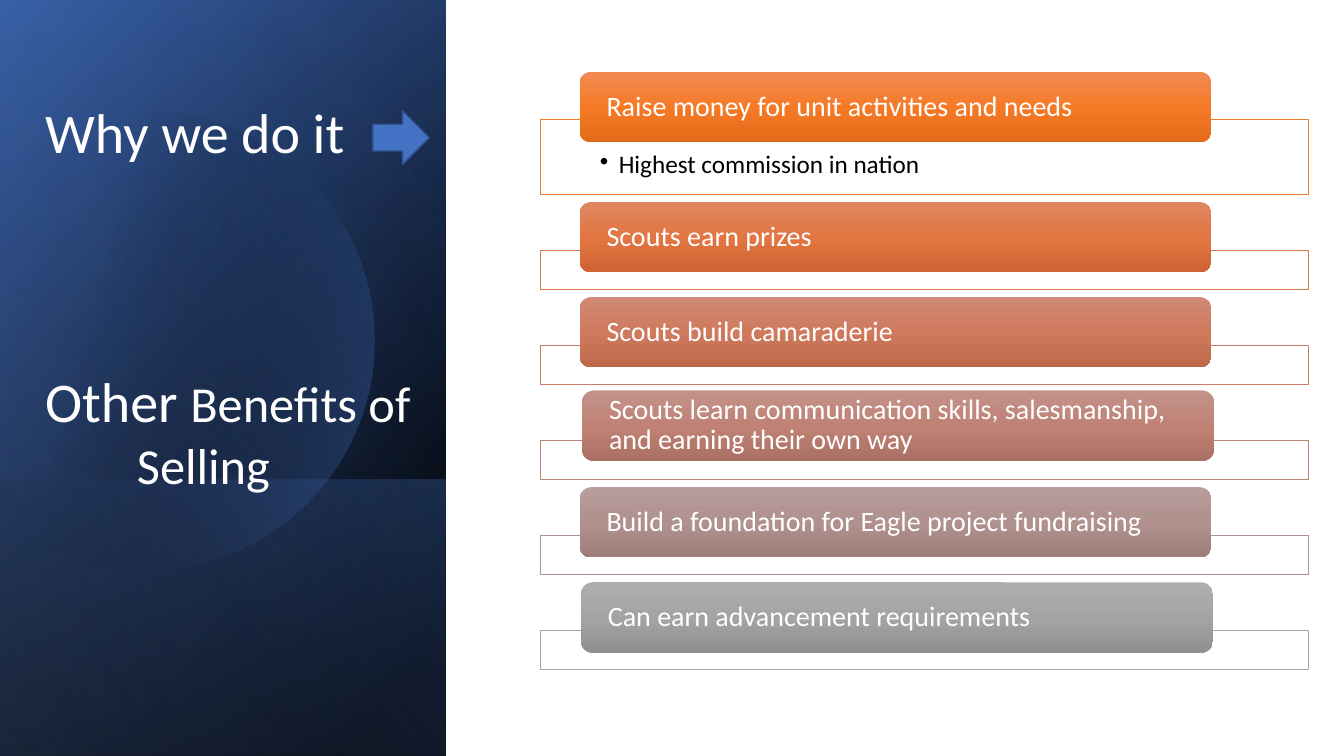
from math import acos, cos, sin

from lxml.etree import SubElement
from pptx import Presentation
from pptx.dml.color import RGBColor
from pptx.enum.shapes import MSO_SHAPE
from pptx.enum.text import MSO_ANCHOR, PP_ALIGN
from pptx.oxml.ns import qn
from pptx.util import Pt

FONT = "Calibri"
WHITE = "FFFFFF"
BLUE = "4472C4"

# Text, gradient, frame line, bullet, nudge of the bar (x, y)
ITEMS = [
    ("Raise money for unit activities and needs",
     ("F08B54", "F67A26", "E36A18"), "ED7D31",
     "Highest commission in nation", (0, 0)),
    ("Scouts earn prizes",
     ("DF8763", "E27542", "CF6432"), "DB784A", None, (0, 0)),
    ("Scouts build camaraderie",
     ("D08A76", "CF795D", "BD674B"), "CB7C63", None, (0, 0)),
    ("Scouts learn communication skills, salesmanship, and earning their own way",
     ("C39289", "BF8275", "AB7064"), "BC857A", None, (1.8, -1.2)),
    ("Build a foundation for Eagle project fundraising",
     ("B79E9B", "B0918E", "9D7E7B"), "AF9390", None, (0, 0)),
    ("Can earn advancement requirements",
     ("AEAEAE", "A4A4A4", "909090"), "A4A4A4", None, (1, 0)),
]


def color(code):
    return RGBColor.from_string(code)


def blend(shape, stops, angle):
    """Fill with a gradient of (position, colour, opacity) stops."""
    shape.fill.gradient()
    grad = shape._element.spPr.find(qn("a:gradFill"))
    group = grad.find(qn("a:gsLst"))
    for old in list(group):
        group.remove(old)
    for pos, code, alpha in stops:
        stop = SubElement(group, qn("a:gs"), pos=str(pos * 1000))
        tint = SubElement(stop, qn("a:srgbClr"), val=code)
        if alpha < 100:
            SubElement(tint, qn("a:alpha"), val=str(alpha * 1000))
    grad.find(qn("a:lin")).set("ang", str(angle * 60000))


def add_part(slide, kind, left, top, width, height, line=None, weight=0.75):
    shape = slide.shapes.add_shape(
        kind, Pt(left), Pt(top), Pt(width), Pt(height))
    shape.shadow.inherit = False
    if line:
        shape.line.color.rgb = color(line)
        shape.line.width = Pt(weight)
    else:
        shape.line.fill.background()
    return shape


def set_frame(shape, insets, anchor):
    frame = shape.text_frame
    frame.word_wrap = True
    frame.vertical_anchor = anchor
    left, top, right, bottom = map(Pt, insets)
    frame.margin_left, frame.margin_top = left, top
    frame.margin_right, frame.margin_bottom = right, bottom
    return frame


def add_run(para, text, size, code):
    run = para.add_run()
    run.text = text
    run.font.name = FONT
    run.font.size = Pt(size)
    run.font.color.rgb = color(code)


def style(para, indent=0, before=0):
    para.alignment = PP_ALIGN.LEFT
    para.line_spacing = 0.9
    if before:
        para.space_before = Pt(before)
    if indent:
        para._p.get_or_add_pPr().set("marL", str(Pt(indent)))


def add_wash(slide, left, top, width, height, stops, angle):
    """Place a mirrored rectangle, turned a quarter, over the given box."""
    shift = (width - height) / 2
    wash = add_part(slide, MSO_SHAPE.RECTANGLE,
                    left + shift, top - shift, height, width)
    wash.rotation = 90
    wash._element.spPr.find(qn("a:xfrm")).set("flipH", "1")
    blend(wash, stops, angle)


def add_disc(slide, left, top, height):
    """Draw a circle cut off by the left edge of the panel."""
    radius = height / 2
    offset = 103
    mid = top + radius
    edge = acos(-offset / radius)
    steps = 120
    turns = [edge * (2 * i / steps - 1) for i in range(steps + 1)]
    points = [(Pt(left + offset + radius * cos(t)),
               Pt(mid + radius * sin(t))) for t in turns]
    draft = slide.shapes.build_freeform(*points[0])
    draft.add_line_segments(points[1:], close=True)
    disc = draft.convert_to_shape()
    disc.shadow.inherit = False
    disc.line.fill.background()
    blend(disc, [(0, "000000", 0), (29, "000000", 0), (100, BLUE, 43)], 14)


def add_panel(slide, left, top, width, height):
    # Layers of blue
    low = 197.5
    box = (left, top, width, height)
    add_wash(slide, *box, [(0, "000000", 100), (8, "000000", 100),
                           (100, "2F5496", 100)], 50)
    add_wash(slide, *box, [(0, "000000", 0), (99, BLUE, 46),
                           (100, BLUE, 46)], 30)
    add_wash(slide, left, top + height - low, width, low,
             [(0, BLUE, 29), (2, BLUE, 29), (100, "000000", 30)], 130)
    add_disc(slide, left, top + 79, 328.5)
    add_wash(slide, *box, [(0, "000000", 0), (99, "8DA9DB", 11),
                           (100, "8DA9DB", 11)], 120)

    # Title
    title = slide.shapes.add_textbox(
        Pt(left + 25.2), Pt(top + 31), Pt(281.5), Pt(326.2))
    frame = set_frame(title, (7.2, 3.6, 7.2, 3.6), MSO_ANCHOR.BOTTOM)
    lines = [
        ([("Why we do it", 40)], 0, 0),
        ([("Other ", 40), ("Benefits of", 36)], 0, 149),
        ([("Selling", 36)], 65.5, 4.5),
    ]
    for i, (runs, indent, before) in enumerate(lines):
        para = frame.add_paragraph() if i else frame.paragraphs[0]
        style(para, indent, before)
        for text, size in runs:
            add_run(para, text, size, WHITE)

    # Arrow
    arrow = add_part(slide, MSO_SHAPE.RIGHT_ARROW, left + 266.4, top + 79.2,
                     40.3, 38.2, "31538F", 1)
    arrow.fill.solid()
    arrow.fill.fore_color.rgb = color(BLUE)


def add_item(slide, left, top, width, height, item):
    text, shades, line, note, (dx, dy) = item
    # Outlined frame with its bullet
    frame = add_part(slide, MSO_SHAPE.RECTANGLE, left, top, width, height, line)
    frame.fill.solid()
    frame.fill.fore_color.rgb = color(WHITE)
    if note:
        body = set_frame(frame, (42.5, 23, 42.5, 10), MSO_ANCHOR.TOP)
        para = body.paragraphs[0]
        style(para, 13.5)
        props = para._p.get_or_add_pPr()
        props.set("indent", str(-Pt(13.5)))
        SubElement(props, qn("a:buChar"), char="•")
        add_run(para, note, 18, "000000")

    # Bar
    bar = add_part(slide, MSO_SHAPE.ROUNDED_RECTANGLE,
                   left + 28 + dx, top - 34.3 + dy, 451.4, 50.2)
    bar.adjustments[0] = 0.167
    blend(bar, [(i * 50, shade, 100) for i, shade in enumerate(shades)], 90)
    body = set_frame(bar, (16.8, 0, 16.8, 0), MSO_ANCHOR.MIDDLE)
    style(body.paragraphs[0])
    add_run(body.paragraphs[0], text, 20, WHITE)


def add_list(slide, left, top, width):
    for item in ITEMS:
        height = 53.2 if item[3] else 28.1
        add_item(slide, left, top, width, height, item)
        top += height + 39.8


def main():
    deck = Presentation()
    deck.slide_width, deck.slide_height = Pt(960), Pt(540)
    slide = deck.slides.add_slide(deck.slide_layouts[6])
    add_panel(slide, 0, 0, 318.5, 540)
    add_list(slide, 386, 85.6, 548.6)
    deck.save("out.pptx")


if __name__ == "__main__":
    main()
